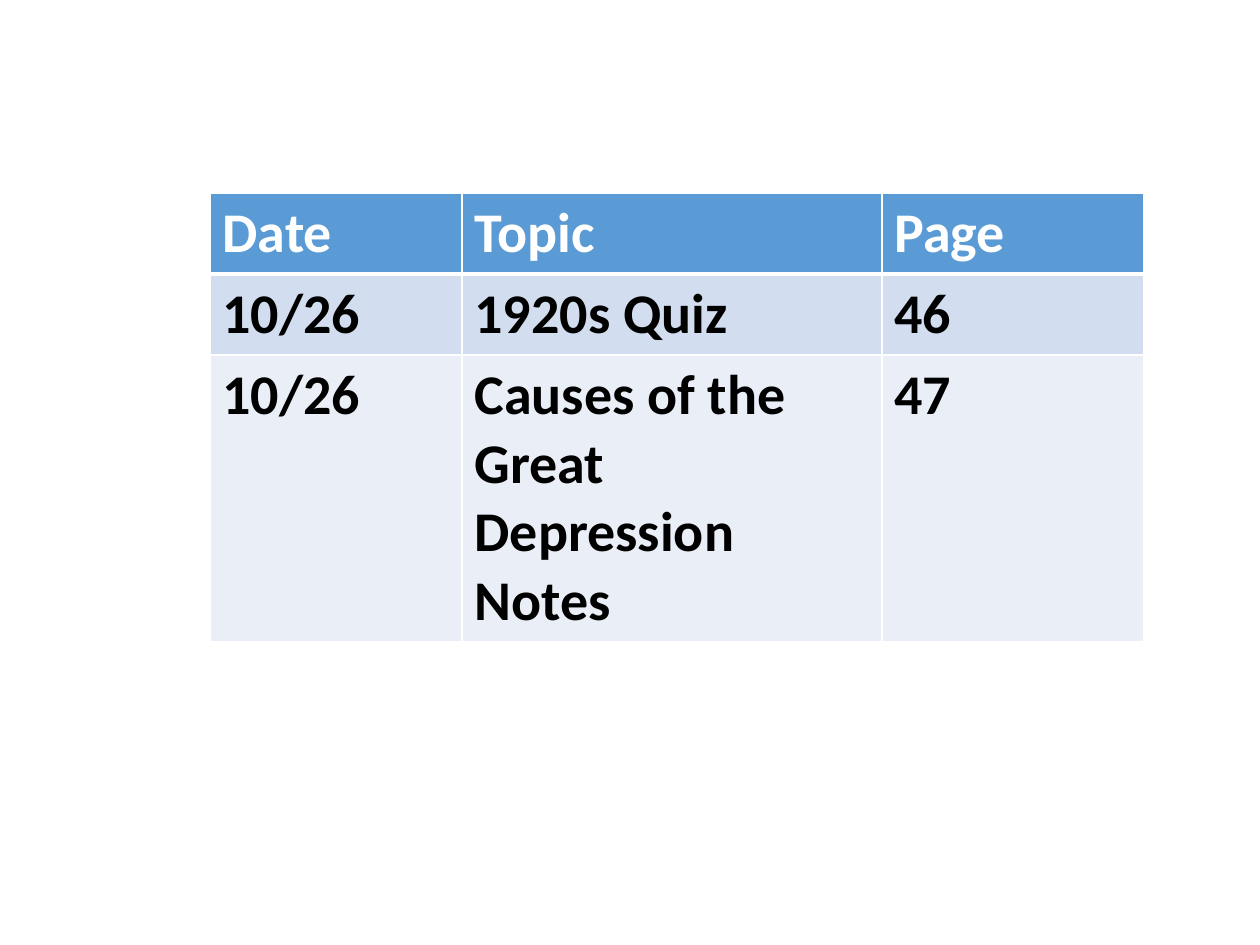
from lxml import etree
from pptx import Presentation
from pptx.dml.color import RGBColor
from pptx.oxml.ns import qn
from pptx.util import Emu, Pt

PX = 914400 / 126
FONT = "Calibri"
COLORS = {
    "header": "5B9BD5",
    "odd": "D2DEEF",
    "even": "EAEFF7",
    "white": "FFFFFF",
    "black": "000000",
}
COLUMN_WIDTHS = [252, 420, 262]
ROW_HEIGHT = 52
ROWS = [
    ("Date", "Topic", "Page"),
    ("10/26", "1920s Quiz", "46"),
    ("10/26", "Causes of the Great Depression Notes", "47"),
]


def px(length):
    """Turn whole pixels into EMU."""
    return Emu(round(length * PX))


def write_text(frame, text, *, size, color, bold=False):
    """Put one formatted span of text in a frame."""
    span = frame.paragraphs[0].add_run()
    span.text = text
    span.font.name = FONT
    span.font.size = Pt(size)
    span.font.bold = bold
    span.font.color.rgb = RGBColor.from_string(COLORS[color])


def set_borders(cell, color, widths):
    """Give the cell solid borders, with widths in points by side."""
    properties = cell._tc.get_or_add_tcPr()
    for index, (side, width) in enumerate(widths.items()):
        line = etree.Element(qn(f"a:ln{side}"), w=str(Pt(width)))
        fill = etree.SubElement(line, qn("a:solidFill"))
        etree.SubElement(fill, qn("a:srgbClr"), val=COLORS[color])
        properties.insert(index, line)


def add_contents_table(page, left, top):
    """Draw the table of dates, topics and pages."""
    box = page.shapes.add_table(
        len(ROWS), len(COLUMN_WIDTHS), px(left), px(top),
        px(sum(COLUMN_WIDTHS)), px(ROW_HEIGHT * len(ROWS)),
    )
    table = box.table
    for column, width in zip(table.columns, COLUMN_WIDTHS):
        column.width = px(width)
    for row_index, texts in enumerate(ROWS):
        table.rows[row_index].height = px(ROW_HEIGHT)
        is_header = row_index == 0
        fill = "header" if is_header else ("even", "odd")[row_index % 2]
        top_width = 3 if row_index == 1 else 1
        bottom_width = 3 if is_header else 1
        for column_index, text in enumerate(texts):
            cell = table.cell(row_index, column_index)
            cell.fill.solid()
            cell.fill.fore_color.rgb = RGBColor.from_string(COLORS[fill])
            set_borders(cell, "white", {"L": 1, "R": 1, "T": top_width, "B": bottom_width})
            write_text(cell.text_frame, text, size=32, bold=True,
                       color="white" if is_header else "black")


def main():
    """Build and save the deck."""
    deck = Presentation()
    deck.slide_width, deck.slide_height = px(1260), px(945)
    page = deck.slides.add_slide(deck.slide_layouts[6])
    add_contents_table(page, 210, 193)
    deck.save("out.pptx")


if __name__ == "__main__":
    main()
